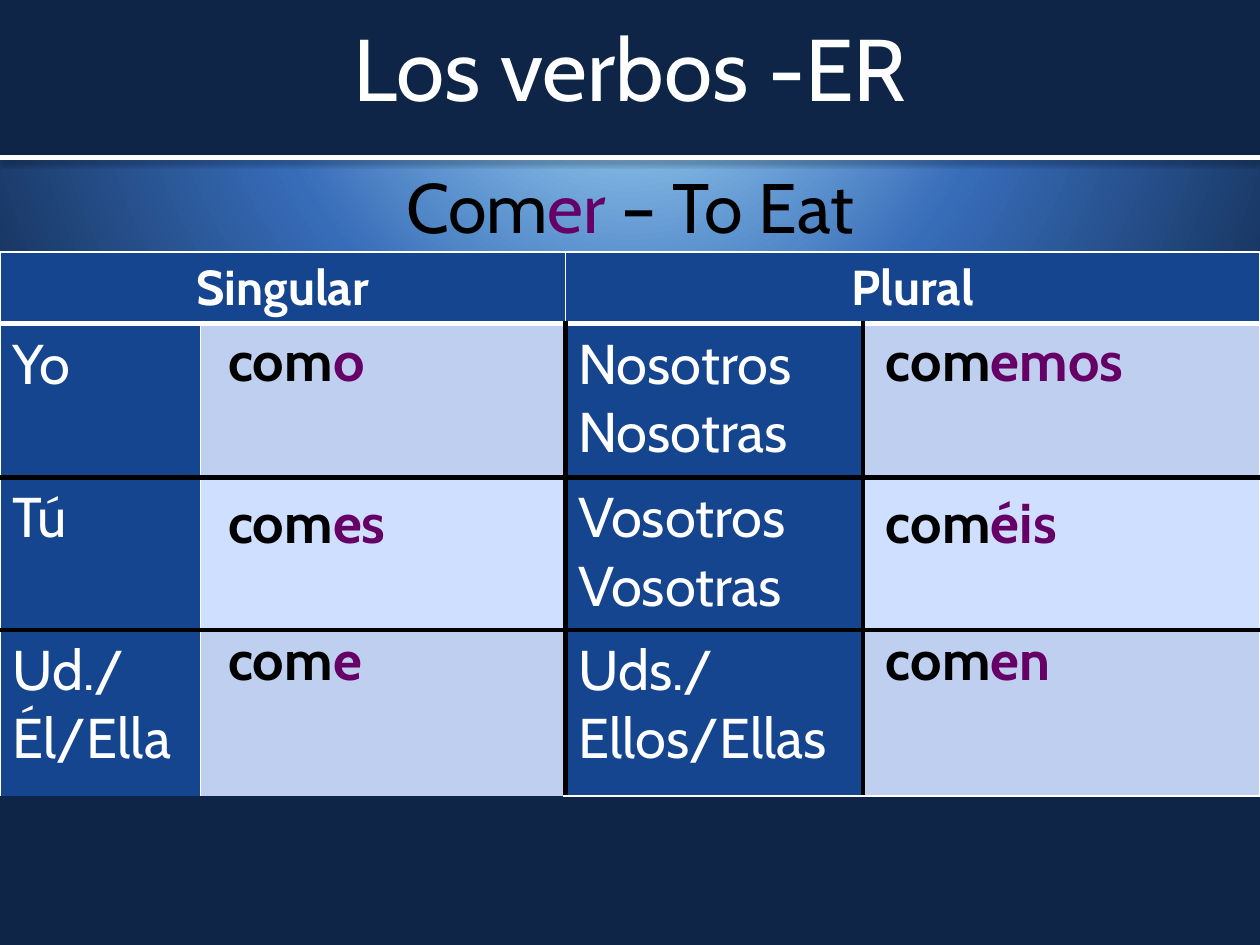
from dataclasses import dataclass

from lxml.etree import SubElement
from pptx import Presentation
from pptx.dml.color import RGBColor
from pptx.enum.shapes import MSO_CONNECTOR as Connector, MSO_SHAPE as Shape
from pptx.enum.text import MSO_ANCHOR as Anchor, PP_ALIGN as Align
from pptx.oxml import parse_xml
from pptx.oxml.ns import nsdecls, qn
from pptx.util import Inches, Pt


@dataclass(frozen=True)
class Theme:
    font: str = "Cabin"
    navy: str = "0E2547"
    sky: str = "B1E9FF"
    blue: str = "376CB8"
    label: str = "15458F"
    bands: tuple = ("BFCFEF", "CEDFFF")
    white: str = "FFFFFF"
    black: str = "000000"
    ending: str = "660066"
    title: int = 50
    subtitle: int = 40
    heading: int = 28
    body: int = 32
    thin: int = 1
    thick: int = 3


THEME = Theme()
NO_GRID_STYLE = "{2D5ABB26-0587-4C30-8999-92F81FD0307C}"
COLUMNS = (1.59, 2.9, 2.36, 3.15)
ROWS = (0.57, 1.22, 1.21, 1.32)
PRONOUNS = (
    (("Yo",), ("Nosotros", "Nosotras")),
    (("Tú",), ("Vosotros", "Vosotras")),
    (("Ud./Él/Ella",), ("Uds./Ellos/Ellas",)),
)
ENDINGS = (("o", "emos"), ("es", "éis"), ("e", "en"))
VERB_LEFTS = (1.71, 6.93)
VERB_TOPS = (2.55, 3.83, 4.92)
VERB_WIDTHS = (2.46, 2.82)


def add_run(paragraph, text, size, color, bold=False):
    run = paragraph.add_run()
    run.text = text
    run.font.name = THEME.font
    run.font.size = Pt(size)
    run.font.bold = bold
    run.font.color.rgb = RGBColor.from_string(color)


def paint_background(slide):
    stops = ((0, THEME.sky), (48, THEME.blue), (100, THEME.navy))
    gradient_stops = "".join(
        f'<a:gs pos="{position * 1000}"><a:srgbClr val="{color}"/></a:gs>'
        for position, color in stops
    )
    backdrop = parse_xml(
        f'<p:bg {nsdecls("p", "a")}><p:bgPr><a:gradFill rotWithShape="1">'
        f'<a:gsLst>{gradient_stops}</a:gsLst><a:path path="circle">'
        '<a:fillToRect l="50000" t="-80000" r="50000" b="180000"/></a:path>'
        '</a:gradFill><a:effectLst/></p:bgPr></p:bg>'
    )
    slide.element.find(qn("p:cSld")).insert(0, backdrop)


def add_band(slide):
    band = slide.shapes.add_shape(Shape.RECTANGLE, 0, 0, Inches(10), Inches(1.25))
    band.shadow.inherit = False
    band.fill.solid()
    band.fill.fore_color.rgb = RGBColor.from_string(THEME.navy)
    band.line.fill.background()


def add_rule(slide):
    top = Inches(1.25)
    rule = slide.shapes.add_connector(Connector.STRAIGHT, 0, top, Inches(10), top)
    rule.line.color.rgb = RGBColor.from_string(THEME.white)
    rule.line.width = Pt(THEME.thick)
    rule.element.spPr.append(parse_xml(
        f'<a:effectLst {nsdecls("a")}><a:outerShdw blurRad="{Pt(3.1)}" '
        f'dist="{Pt(1.6)}" dir="5400000" rotWithShape="0">'
        f'<a:srgbClr val="{THEME.black}"><a:alpha val="38000"/></a:srgbClr>'
        '</a:outerShdw></a:effectLst>'
    ))


def add_centred_line(slide, top, height, size, pieces, anchor):
    box = slide.shapes.add_textbox(0, Inches(top), Inches(10), Inches(height))
    frame = box.text_frame
    frame.word_wrap = True
    frame.vertical_anchor = anchor
    line = frame.paragraphs[0]
    line.alignment = Align.CENTER
    for text, color in pieces:
        add_run(line, text, size, color)


def add_plain_table(slide, left, top, columns, rows):
    frame = slide.shapes.add_table(
        len(rows), len(columns), Inches(left), Inches(top),
        Inches(sum(columns)), Inches(sum(rows)),
    )
    table = frame.table
    table.first_row = table.horz_banding = False
    table._tbl.tblPr.find(qn("a:tableStyleId")).text = NO_GRID_STYLE
    for column, width in zip(table.columns, columns):
        column.width = Inches(width)
    for row, height in zip(table.rows, rows):
        row.height = Inches(height)
    return table


def fill_cell(cell, color):
    cell.fill.solid()
    cell.fill.fore_color.rgb = RGBColor.from_string(color)


def set_borders(cell, edges):
    properties = cell._tc.get_or_add_tcPr()
    for position, (side, edge) in enumerate(zip("LRTB", edges)):
        border = SubElement(properties, qn(f"a:ln{side}"))
        properties.insert(position, border)
        if edge is None:
            SubElement(border, qn("a:noFill"))
            continue
        color, width = edge
        border.set("w", str(Pt(width)))
        solid = SubElement(border, qn("a:solidFill"))
        SubElement(solid, qn("a:srgbClr")).set("val", color)


def rule_grid(table):
    hairline = (THEME.white, THEME.thin)
    divider = (THEME.black, THEME.thick)
    header_rule = (THEME.white, THEME.thick)
    body_verticals = (hairline, hairline, divider, divider, hairline)
    for row in range(len(ROWS)):
        verticals = body_verticals if row else (hairline,) * 5
        for column in range(len(COLUMNS)):
            bottom = hairline if column > 1 else None
            horizontals = (hairline, header_rule, divider, divider, bottom)
            set_borders(
                table.cell(row, column),
                verticals[column:column + 2] + horizontals[row:row + 2],
            )


def add_pronoun_table(slide):
    table = add_plain_table(slide, 0, 2, COLUMNS, ROWS)
    for column, heading in ((0, "Singular"), (2, "Plural")):
        header = table.cell(0, column)
        header.merge(table.cell(0, column + 1))
        fill_cell(header, THEME.label)
        line = header.text_frame.paragraphs[0]
        line.alignment = Align.CENTER
        add_run(line, heading, THEME.heading, THEME.white, bold=True)
    for row, pair in enumerate(PRONOUNS, start=1):
        for column, pronouns in zip((0, 2), pair):
            label = table.cell(row, column)
            fill_cell(label, THEME.label)
            fill_cell(table.cell(row, column + 1), THEME.bands[(row - 1) % 2])
            frame = label.text_frame
            for index, pronoun in enumerate(pronouns):
                line = frame.add_paragraph() if index else frame.paragraphs[0]
                add_run(line, pronoun, THEME.body, THEME.white)
    rule_grid(table)


def add_verb(slide, left, top, width, ending):
    verb = add_plain_table(slide, left, top, (width,), (0.63,)).cell(0, 0)
    line = verb.text_frame.paragraphs[0]
    add_run(line, "com", THEME.body, THEME.black, bold=True)
    add_run(line, ending, THEME.body, THEME.ending, bold=True)


def main():
    deck = Presentation()
    deck.slide_width, deck.slide_height = Inches(10), Inches(7.5)
    slide = deck.slides.add_slide(deck.slide_layouts[6])
    paint_background(slide)
    add_band(slide)
    infinitive = (
        ("Com", THEME.black), ("er ", THEME.ending), ("– To Eat", THEME.black),
    )
    add_centred_line(slide, 1.25, 5.2, THEME.subtitle, infinitive, Anchor.TOP)
    add_rule(slide)
    title = (("Los verbos -ER", THEME.white),)
    add_centred_line(slide, 0, 1.06, THEME.title, title, Anchor.MIDDLE)
    add_pronoun_table(slide)
    for column, (left, width) in enumerate(zip(VERB_LEFTS, VERB_WIDTHS)):
        for top, endings in zip(VERB_TOPS, ENDINGS):
            add_verb(slide, left, top, width, endings[column])
    deck.save("out.pptx")


if __name__ == "__main__":
    main()
